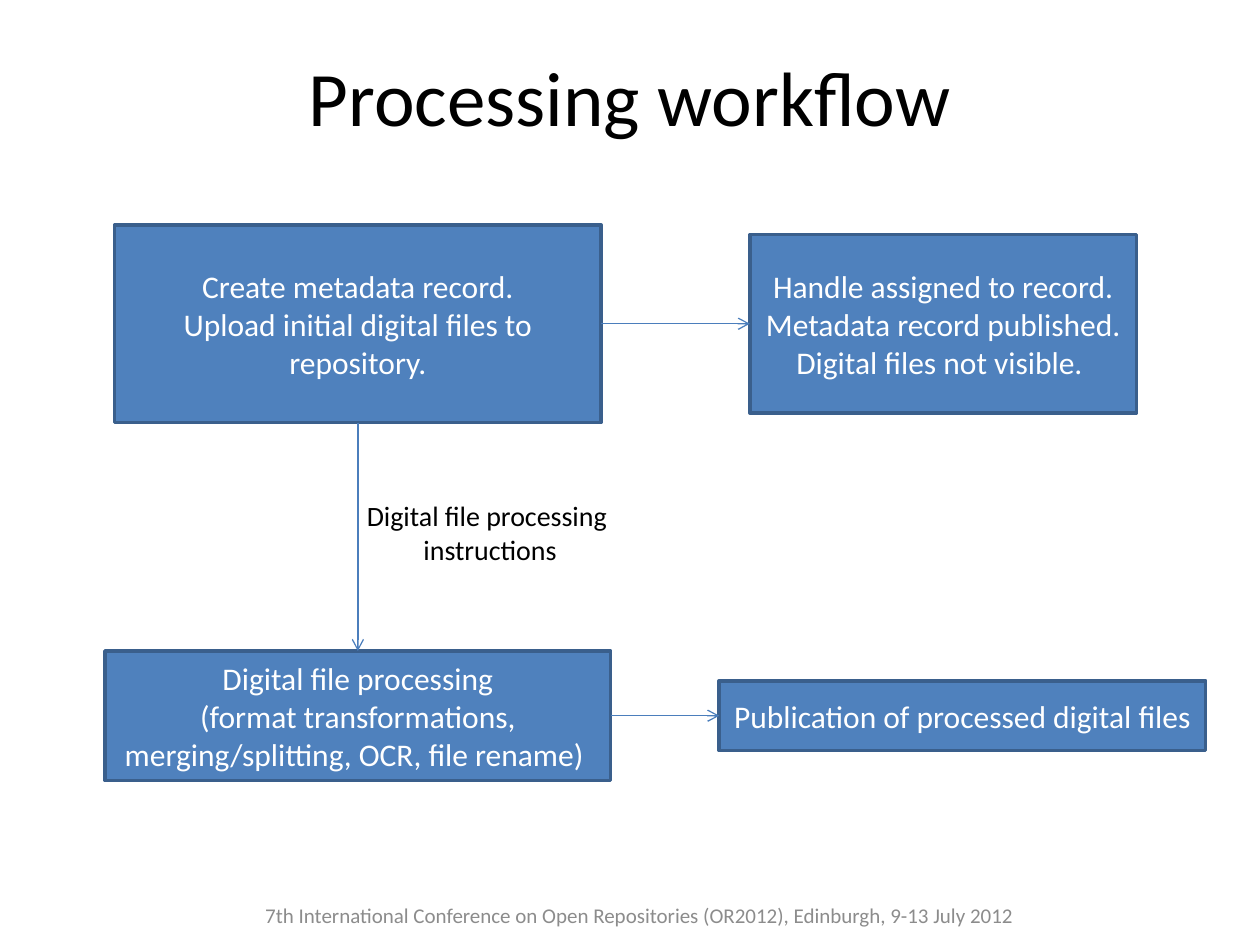
from lxml import etree
from pptx import Presentation
from pptx.dml.color import RGBColor
from pptx.enum import shapes, text
from pptx.oxml import ns
from pptx.util import Pt


def tint(code):
    return RGBColor.from_string(code)


def write(shape, lines, size, color, wrap=True, anchor=text.MSO_ANCHOR.MIDDLE):
    frame = shape.text_frame
    frame.word_wrap = wrap
    frame.vertical_anchor = anchor
    for i, line in enumerate(lines):
        para = frame.paragraphs[0] if i == 0 else frame.add_paragraph()
        para.alignment = text.PP_ALIGN.CENTER
        run = para.add_run()
        run.text = line
        run.font.name = "Calibri"
        run.font.size = Pt(size)
        run.font.color.rgb = tint(color)


def label(slide, box, lines, size, color, **opts):
    shape = slide.shapes.add_textbox(*map(Pt, box))
    write(shape, lines, size, color, **opts)
    return shape


def step(slide, box, lines):
    shape = slide.shapes.add_shape(shapes.MSO_SHAPE.RECTANGLE, *map(Pt, box))
    shape.shadow.inherit = False
    shape.fill.solid()
    shape.fill.fore_color.rgb = tint("4F81BD")
    shape.line.color.rgb = tint("3A5F8C")
    shape.line.width = Pt(2)
    write(shape, lines, 18, "FFFFFF")
    return shape


def arrow(slide, start, out, end, into):
    link = slide.shapes.add_connector(shapes.MSO_CONNECTOR.STRAIGHT, 0, 0, 0, 0)
    link.begin_connect(start, out)
    link.end_connect(end, into)
    link.line.color.rgb = tint("4B7EBC")
    link.line.width = Pt(0.75)
    tail = etree.SubElement(link.line._get_or_add_ln(), ns.qn("a:tailEnd"))
    tail.set("type", "arrow")
    etree.SubElement(link._element.spPr, ns.qn("a:effectLst"))


def flow(slide, left, top, width, height):
    mid = left + 144.5
    upper = top + 56.5
    lower = top + height - 37

    record = step(slide, (mid - 139, upper - 56.5, 278, 113),
                  ["Create metadata record.",
                   "Upload initial digital files to repository."])
    handle = step(slide, (left + 368.5, upper - 51, 221, 102),
                  ["Handle assigned to record.",
                   "Metadata record published. Digital files not visible. "])
    process = step(slide, (left, lower - 37, 289, 74),
                   ["Digital file processing",
                    "(format transformations, merging/splitting, OCR, file rename) "])
    publish = step(slide, (left + width - 278, lower - 20, 278, 40),
                   ["Publication of processed digital files"])

    arrow(slide, record, 3, handle, 1)
    arrow(slide, process, 3, publish, 1)
    arrow(slide, record, 2, process, 0)
    label(slide, (mid - 3, top + 153, 157, 46),
          ["Digital file processing ", "instructions"], 16, "000000",
          wrap=False, anchor=text.MSO_ANCHOR.TOP)


def main():
    deck = Presentation()
    deck.slide_width, deck.slide_height = Pt(720), Pt(540)
    slide = deck.slides.add_slide(deck.slide_layouts[6])
    label(slide, (36, 9.5, 648, 90), ["Processing workflow"], 44, "000000")
    label(slide, (70.5, 508.5, 590, 28.5),
          ["7th International Conference on Open Repositories (OR2012), "
           "Edinburgh, 9-13 July 2012"], 12, "8C8C8C")
    flow(slide, 60, 128.5, 629, 317.5)
    deck.save("out.pptx")


if __name__ == "__main__":
    main()
